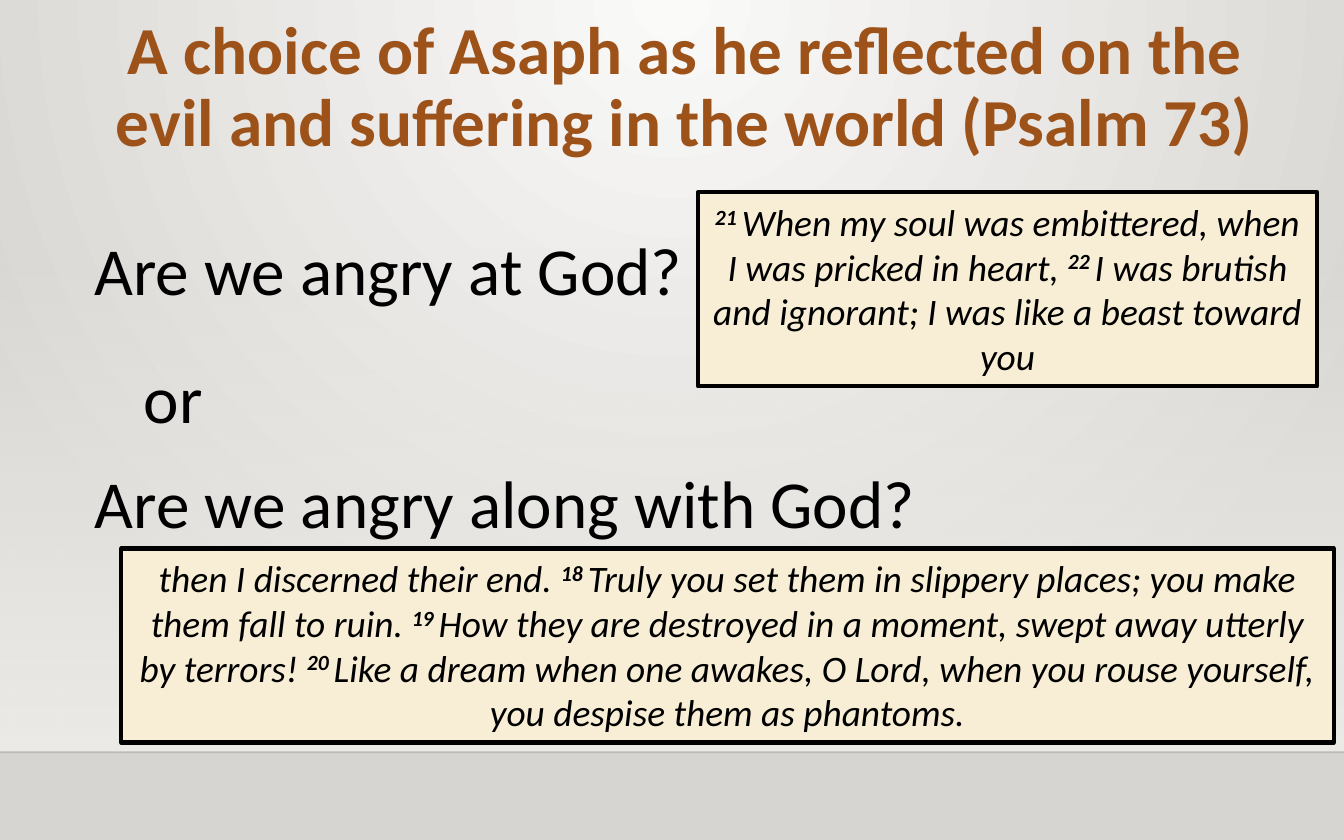
from lxml.etree import SubElement
from pptx import Presentation
from pptx.dml.color import RGBColor
from pptx.enum.shapes import MSO_CONNECTOR as Connector, MSO_SHAPE as Shape
from pptx.enum.text import MSO_ANCHOR as Anchor, MSO_AUTO_SIZE as AutoSize, PP_ALIGN as Align
from pptx.oxml.ns import qn
from pptx.util import Pt

WIDTH, HEIGHT, HORIZON = 720, 450, 403


def rgb(value):
    """Turn a hex string into a colour."""
    return RGBColor.from_string(value)


class PsalmSlide:
    """Holds the style and the current slide."""

    font = "Calibri"
    ink, heading, parchment = "000000", "9D521A", "F8EED6"
    glow, edge, haze, rule = "FAFAF9", "D7D5D2", "EDEBE7", "000001"
    large, small = 36, 20

    def __init__(self, deck):
        """Add a title-only slide to the deck."""
        self.slide = deck.slides.add_slide(deck.slide_layouts[5])

    def style(self, run, size, color, bold=False, italic=False):
        """Format one run."""
        font = run.font
        font.name, font.size = self.font, Pt(size)
        font.bold, font.italic = bold, italic
        font.color.rgb = rgb(color)

    def gradient(self, fill, start, end):
        """Apply a two-colour gradient."""
        fill.gradient()
        for stop, color, position in zip(fill.gradient_stops, (start, end), (0, 1)):
            stop.color.rgb = rgb(color)
            stop.position = position

    def opacity(self, color, percent):
        """Set the opacity of a colour element."""
        SubElement(color, qn("a:alpha")).set("val", str(percent * 1000))

    def backdrop(self):
        """Light the background from the top centre."""
        self.gradient(self.slide.background.fill, self.glow, self.edge)
        grad = next(self.slide.element.iter(qn("a:gradFill")))
        grad.remove(grad.find(qn("a:lin")))
        radial = SubElement(grad, qn("a:path"), path="circle")
        SubElement(radial, qn("a:fillToRect"), l="43000", t="0", r="43000", b="100000")

    def floor(self, top):
        """Fade a haze down to the horizon and rule it off."""
        band = self.slide.shapes.add_shape(Shape.RECTANGLE, 0, Pt(top), Pt(WIDTH), Pt(HORIZON - top))
        band.shadow.inherit = False
        band.line.fill.background()
        self.gradient(band.fill, self.haze, self.haze)
        band.fill.gradient_angle = 270
        self.opacity(next(band.element.iter(qn("a:srgbClr"))), 0)
        horizon = self.slide.shapes.add_connector(Connector.STRAIGHT, 0, Pt(HORIZON), Pt(WIDTH), Pt(HORIZON))
        horizon.line.width = Pt(1)
        horizon.line.color.rgb = rgb(self.rule)
        self.opacity(next(horizon.element.iter(qn("a:srgbClr"))), 20)
        SubElement(horizon.element.spPr, qn("a:effectLst"))

    def title(self, words, left, top, width, height):
        """Place and format the title."""
        title = self.slide.shapes.title
        title.left, title.top, title.width, title.height = map(Pt, (left, top, width, height))
        frame = title.text_frame
        frame.text = words
        frame.auto_size, frame.vertical_anchor = AutoSize.NONE, Anchor.BOTTOM
        paragraph = frame.paragraphs[0]
        paragraph.alignment, paragraph.line_spacing = Align.CENTER, 0.9
        self.style(paragraph.runs[0], self.large, self.heading, bold=True)

    def question(self, words, left, top, width):
        """Add one line of the choice."""
        frame = self.slide.shapes.add_textbox(Pt(left), Pt(top), Pt(width), Pt(51)).text_frame
        frame.text = words
        frame.word_wrap = True
        self.style(frame.paragraphs[0].runs[0], self.large, self.ink)

    def passage(self, verses, left, top, width, height):
        """Add a framed quotation with raised verse numbers."""
        panel = self.slide.shapes.add_shape(Shape.RECTANGLE, Pt(left), Pt(top), Pt(width), Pt(height))
        panel.shadow.inherit = False
        panel.fill.solid()
        panel.fill.fore_color.rgb = rgb(self.parchment)
        panel.line.color.rgb = rgb(self.ink)
        panel.line.width = Pt(2.25)
        frame = panel.text_frame
        frame.word_wrap, frame.vertical_anchor = True, Anchor.TOP
        paragraph = frame.paragraphs[0]
        paragraph.alignment = Align.CENTER
        for number, words in verses:
            if number:
                verse = paragraph.add_run()
                verse.text = f"{number} "
                self.style(verse, self.small, self.ink, bold=True, italic=True)
                verse.font._element.set("baseline", "30000")
            quote = paragraph.add_run()
            quote.text = words
            self.style(quote, self.small, self.ink, italic=True)


def main():
    """Build the slide and save it."""
    deck = Presentation()
    deck.slide_width, deck.slide_height = Pt(WIDTH), Pt(HEIGHT)
    psalm = PsalmSlide(deck)
    psalm.backdrop()
    psalm.floor(132.5)
    psalm.title("A choice of Asaph as he reflected on the evil and suffering in the world (Psalm 73)",
                34, 5, 666, 85)
    psalm.question("Are we angry at God?", 43.4, 119, 407.5)
    psalm.question("or", 70, 187.5, 50.5)
    psalm.question("Are we angry along with God?", 43.8, 243.5, 469.5)
    psalm.passage([
        (21, "When my soul was embittered, when I was pricked in heart, "),
        (22, "I was brutish and ignorant; I was like a beast toward you"),
    ], 374, 103, 331.5, 104)
    psalm.passage([
        (None, "then I discerned their end. "),
        (18, "Truly you set them in slippery places; you make them fall to ruin. "),
        (19, "How they are destroyed in a moment, swept away utterly by terrors! "),
        (20, "Like a dream when one awakes, O Lord, when you rouse yourself, you despise them as phantoms."),
    ], 65, 293.8, 649.5, 104)
    deck.save("out.pptx")


if __name__ == "__main__":
    main()
